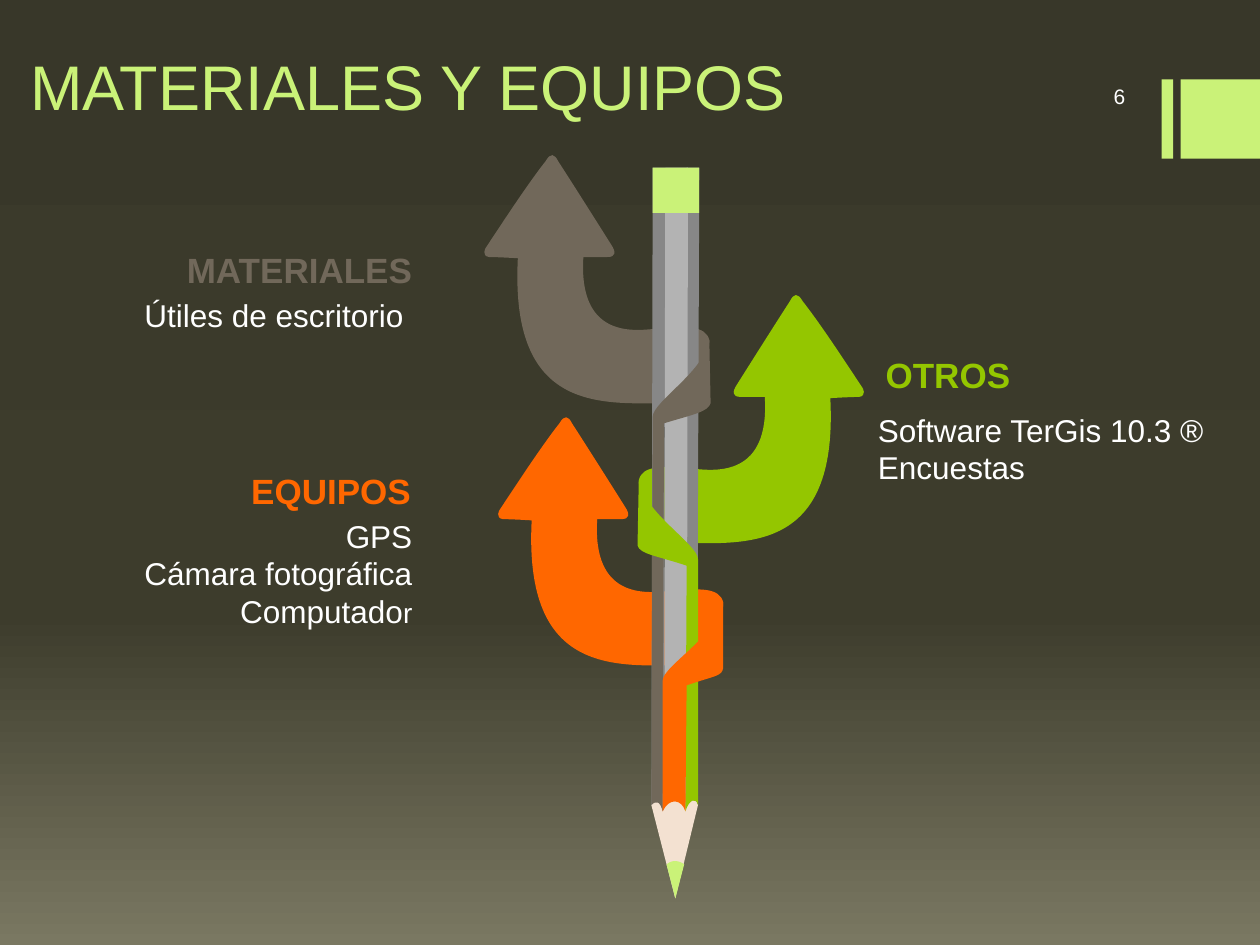
"""Builds the "Materiales y equipos" slide with a pencil and three wrapped arrows."""
from copy import deepcopy

from lxml.etree import SubElement
from pptx import Presentation
from pptx.dml.color import RGBColor
from pptx.enum.shapes import MSO_SHAPE as SHAPE
from pptx.enum.text import MSO_ANCHOR as ANCHOR, PP_ALIGN as ALIGN
from pptx.oxml.ns import qn
from pptx.util import Inches, Pt

LIME, GREEN, ORANGE, BROWN = "CAF278", "94C600", "FF6700", "71685A"
WHITE, DARK_GRAY, LIGHT_GRAY, WOOD = "FFFFFF", "878787", "B3B3B3", "F3E1D1"
STEPS = 20


def rgb(value):
    return RGBColor.from_string(value)


def paint(sp, color):
    sp.shadow.inherit = False
    sp.fill.solid()
    sp.fill.fore_color.rgb = rgb(color)
    sp.line.fill.background()


prs = Presentation()
prs.slide_width, prs.slide_height = Inches(10), Inches(7.5)
s = prs.slides.add_slide(prs.slide_layouts[6])

fill = s.background.fill
fill.gradient()
fill.gradient_angle = 270
gs_lst = s._element.find(".//" + qn("a:gsLst"))
gs_lst.insert(1, deepcopy(gs_lst[0]))
for stop, (pos, color) in zip(fill.gradient_stops, [(0, "383729"), (0.65, "3D3C2C"), (1, "7A7862")]):
    stop.position = pos
    stop.color.rgb = rgb(color)

for left, width in [(9.22, 0.09), (9.37, 0.63)]:
    sp = s.shapes.add_shape(SHAPE.RECTANGLE, Inches(left), Inches(0.63), Inches(width), Inches(0.63))
    paint(sp, LIME)

arrow = [
    (5.74, 4.78), (5.71, 4.66, 5.55, 4.67, 5.31, 4.69), (5.12, 4.71, 4.7, 4.75, 4.74, 4.12),
    (4.93, 4.12), (5, 4.12, 5, 4.08, 4.96, 4.02), (4.96, 4.02, 4.67, 3.56, 4.54, 3.36),
    (4.51, 3.3, 4.48, 3.29, 4.44, 3.36), (4.29, 3.55, 4.07, 3.89, 3.97, 4.04),
    (3.96, 4.05, 3.93, 4.11, 3.99, 4.12), (4.06, 4.12, 4.22, 4.13, 4.22, 4.13),
    (4.16, 5.29, 4.8, 5.29, 5.34, 5.28), (5.44, 5.3, 5.73, 5.17, 5.74, 4.78),
]
wood = [
    (5.26, 6.44), (5.26, 6.44, 5.31, 6.34, 5.34, 6.35), (5.38, 6.36, 5.43, 6.34, 5.44, 6.42),
    (5.45, 6.41, 5.47, 6.35, 5.5, 6.35), (5.53, 6.35, 5.54, 6.39, 5.54, 6.39),
    (5.36, 7.13), (5.17, 6.39), (5.17, 6.39, 5.23, 6.3, 5.26, 6.44),
]
lead = [(5.29, 6.86), (5.36, 7.13), (5.43, 6.86), (5.43, 6.86, 5.36, 6.8, 5.29, 6.86)]
brown_band = [
    (5.26, 6.44), (5.27, 3.36), (5.5, 3.29, 5.62, 3.27, 5.64, 3.2), (5.63, 2.7),
    (5.59, 2.95, 5.18, 3.19, 5.18, 3.31), (5.17, 6.39), (5.21, 6.35, 5.24, 6.36, 5.26, 6.44),
]
green_band = [
    (5.44, 6.44), (5.45, 4.49), (5.21, 4.41, 5.08, 4.4, 5.06, 4.33), (5.07, 3.81),
    (5.11, 4.07, 5.54, 4.32, 5.54, 4.44), (5.54, 6.39), (5.53, 6.33, 5.47, 6.34, 5.44, 6.44),
]
orange_band = [
    (5.44, 6.44), (5.45, 5.44), (5.68, 5.36, 5.73, 5.37, 5.74, 5.3), (5.74, 4.78),
    (5.7, 5.04, 5.26, 5.29, 5.26, 5.4), (5.26, 6.44), (5.31, 6.33, 5.41, 6.34, 5.44, 6.44),
]
left_side = [(5.27, 6.44), (5.17, 6.39), (5.18, 1.33), (5.28, 1.33)]
right_side = [(5.53, 6.41), (5.44, 6.44), (5.45, 1.33), (5.55, 1.33)]
middle = [(5.45, 6.44), (5.27, 6.44), (5.28, 1.33), (5.46, 1.33)]
eraser = (5.18, 1.33, 0.37, 0.36)

outlines = [
    (arrow, ORANGE, 1, 0, 0),
    (arrow, GREEN, -1, 10.81, -0.97),
    (arrow, BROWN, 1, -0.11, -2.08),
    (left_side, DARK_GRAY, 1, 0, 0),
    (right_side, DARK_GRAY, 1, 0, 0),
    (middle, LIGHT_GRAY, 1, 0, 0),
    (wood, WOOD, 1, 0, 0),
    (lead, LIME, 1, 0, 0),
    (eraser, LIME, 1, 0, 0),
    (brown_band, BROWN, 1, 0, 0),
    (green_band, GREEN, 1, 0, 0),
    (orange_band, ORANGE, 1, 0, 0),
]
for segments, color, flip, dx, dy in outlines:
    if segments is eraser:
        paint(s.shapes.add_shape(SHAPE.RECTANGLE, *map(Inches, eraser)), color)
        continue
    placed = [[(Inches(flip * x + dx), Inches(y + dy)) for x, y in zip(seg[::2], seg[1::2])]
              for seg in segments]
    reach = [placed[0][0]]
    for seg in placed[1:]:
        ctrl = [reach[-1], *seg]
        if len(seg) == 3:
            for i in range(1, STEPS):
                t = i / STEPS
                weights = ((1 - t) ** 3, 3 * t * (1 - t) ** 2, 3 * t * t * (1 - t), t ** 3)
                reach.append(tuple(round(sum(w * c[axis] for w, c in zip(weights, ctrl)))
                                   for axis in (0, 1)))
        reach.append(seg[-1])
    xs, ys = zip(*reach)
    left, top, right, bottom = min(xs), min(ys), max(xs), max(ys)
    builder = s.shapes.build_freeform(left, top, scale=1.0)
    builder.add_line_segments([(right, top), (right, bottom), (left, bottom)], close=True)
    sp = builder.convert_to_shape()
    outline = sp._element.find(".//" + qn("a:path"))
    for child in list(outline):
        outline.remove(child)
    for i, seg in enumerate(placed):
        tag = "a:moveTo" if i == 0 else "a:cubicBezTo" if len(seg) == 3 else "a:lnTo"
        step = SubElement(outline, qn(tag))
        for x, y in seg:
            SubElement(step, qn("a:pt"), x=str(x - left), y=str(y - top))
    SubElement(outline, qn("a:close"))
    paint(sp, color)

texts = [
    ((0.14, 0, 6.83, 1.03), ANCHOR.BOTTOM, ALIGN.LEFT, LIME, False, [[("MATERIALES Y EQUIPOS", 36)]]),
    ((8, 0.6, 1.03, 0.33), ANCHOR.MIDDLE, ALIGN.RIGHT, WHITE, False, [[("6", 12)]]),
    ((6.93, 2.76, 1.42, 0.44), ANCHOR.TOP, ALIGN.LEFT, GREEN, True, [[("OTROS", 20)]]),
    ((6.87, 3.21, 2.94, 0.71), ANCHOR.TOP, ALIGN.LEFT, WHITE, False,
     [[("Software TerGis 10.3 ®", 18)], [("Encuestas", 18)]]),
    ((1.36, 1.92, 2.01, 0.44), ANCHOR.TOP, ALIGN.RIGHT, BROWN, True, [[("MATERIALES", 20)]]),
    ((0.88, 2.3, 2.49, 0.4), ANCHOR.TOP, ALIGN.RIGHT, WHITE, False, [[("Útiles de escritorio ", 18)]]),
    ((1.88, 3.68, 1.48, 0.44), ANCHOR.TOP, ALIGN.RIGHT, ORANGE, True, [[("EQUIPOS", 20)]]),
    ((0.88, 4.05, 2.49, 1.01), ANCHOR.TOP, ALIGN.RIGHT, WHITE, False,
     [[("GPS", 18)], [("Cámara fotográfica", 18)], [("Computado", 18), ("r", 16)]]),
]
for box, anchor, align, color, bold, lines in texts:
    sp = s.shapes.add_textbox(*map(Inches, box))
    tf = sp.text_frame
    tf.word_wrap = not bold
    tf.vertical_anchor = anchor
    for i, runs in enumerate(lines):
        p = tf.add_paragraph() if i else tf.paragraphs[0]
        p.alignment = align
        for text, size in runs:
            r = p.add_run()
            r.text = text
            r.font.name = "Arial"
            r.font.size = Pt(size)
            r.font.bold = bold
            r.font.color.rgb = rgb(color)

prs.save("out.pptx")
